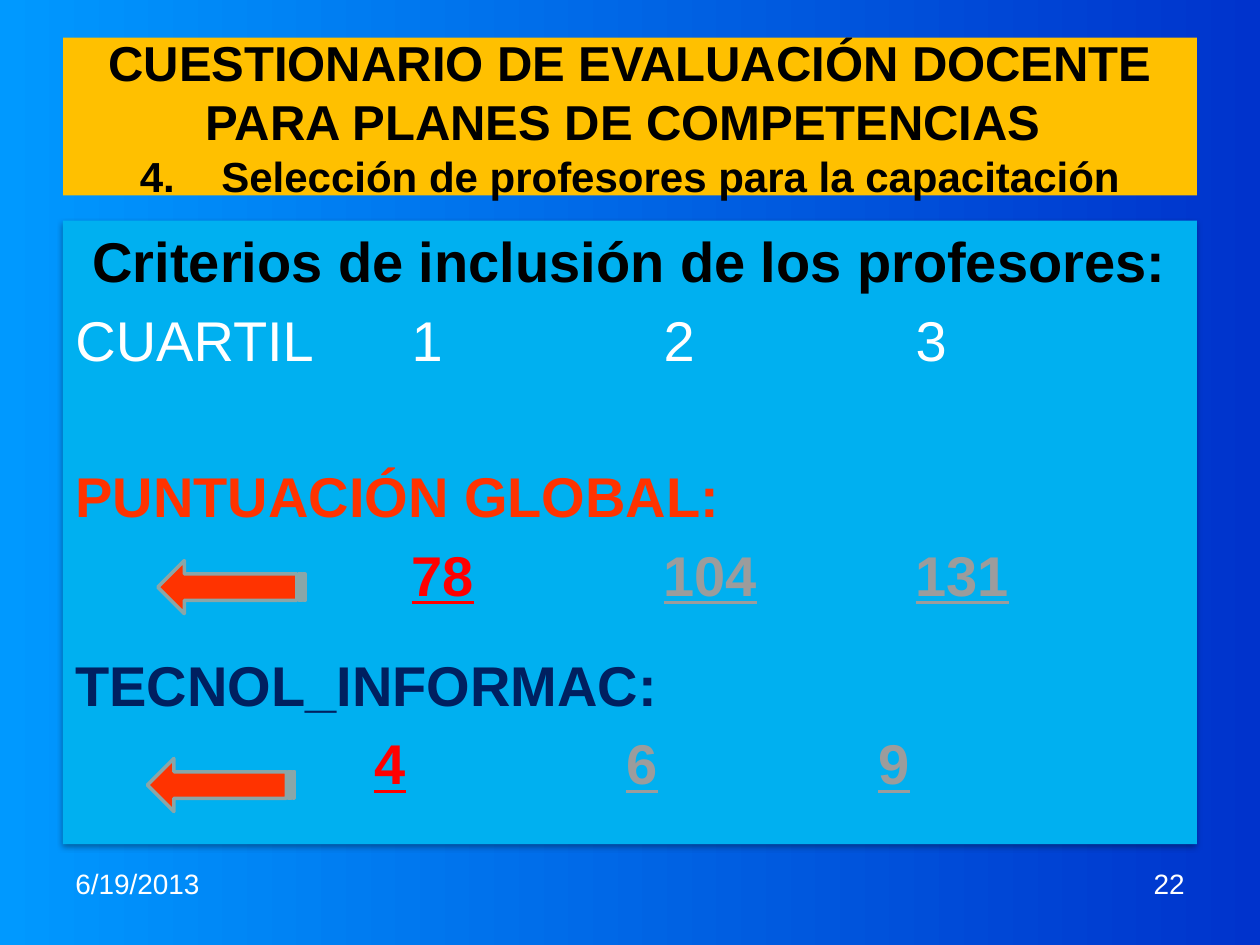
from lxml import etree
from pptx import Presentation
from pptx import util as u
from pptx.dml import color
from pptx.enum import shapes, text
from pptx.oxml import ns

COLORS = {
    "bg_left": "0099FF", "bg_right": "0033CC", "title": "FFC000", "panel": "00B0F0",
    "black": "000000", "white": "FFFFFF", "orange": "FF3300", "red": "FF0000",
    "gray": "9C9C9C", "navy": "002060", "arrow_line": "8AA6A8",
}
LEFT, WIDTH = u.Cm(1.27), u.Cm(22.86)
TAB_STEP = u.Cm(2.54)


def rgb(name):
    return color.RGBColor.from_string(COLORS[name])


def add_run(paragraph, words, color_name, **formats):
    run = paragraph.add_run()
    run.text = words
    run.font.name = "Arial"
    run.font.color.rgb = rgb(color_name)
    for attribute, value in formats.items():
        setattr(run.font, attribute, value)


presentation = Presentation()
presentation.slide_width, presentation.slide_height = u.Cm(25.4), u.Cm(19.05)
slide = presentation.slides.add_slide(presentation.slide_layouts[5])

# Background gradient, left to right
background = slide.background.fill
background.gradient()
background.gradient_angle = 0
for stop, name in zip(background.gradient_stops, ("bg_left", "bg_right")):
    stop.color.rgb = rgb(name)

# Title
title = slide.shapes.title
title.left, title.top, title.width, title.height = LEFT, u.Cm(0.76), WIDTH, u.Cm(3.18)
title.fill.solid()
title.fill.fore_color.rgb = rgb("title")
title.text_frame.auto_size = text.MSO_AUTO_SIZE.NONE
title.text_frame.vertical_anchor = text.MSO_ANCHOR.MIDDLE
heading = title.text_frame.paragraphs[0]
heading.alignment = text.PP_ALIGN.CENTER
title_lines = [
    ("CUESTIONARIO DE EVALUACIÓN DOCENTE", 28),
    ("PARA PLANES DE COMPETENCIAS ", 28),
    ("4.    Selección de profesores para la capacitación", 24),
]
for index, (words, size) in enumerate(title_lines):
    if index:
        heading.add_line_break()
    add_run(heading, words, "black", size=u.Pt(size), bold=True)

# Date and slide number
footers = [
    (LEFT, "6/19/2013", text.PP_ALIGN.LEFT),
    (u.Cm(18.21), "22", text.PP_ALIGN.RIGHT),
]
for left, words, alignment in footers:
    footer = slide.shapes.add_textbox(left, u.Cm(17.35), u.Cm(5.92), u.Cm(1.32))
    footer.text_frame.word_wrap = True
    paragraph = footer.text_frame.paragraphs[0]
    paragraph.alignment = alignment
    add_run(paragraph, words, "white", size=u.Pt(16))

# Criteria panel with a soft shadow
panel = slide.shapes.add_shape(shapes.MSO_SHAPE.RECTANGLE, LEFT, u.Cm(4.45), WIDTH, u.Cm(12.57))
panel.shadow.inherit = False
panel.fill.solid()
panel.fill.fore_color.rgb = rgb("panel")
panel.line.fill.background()
effects = panel._element.spPr.find(ns.qn("a:effectLst"))
shadow = etree.SubElement(effects, ns.qn("a:outerShdw"), blurRad="40000", dist="23000",
                          dir="5400000", rotWithShape="0")
shade = etree.SubElement(shadow, ns.qn("a:srgbClr"), val=COLORS["black"])
etree.SubElement(shade, ns.qn("a:alpha"), val="35000")

# Criteria: space before (pt), indent (cm), runs of (words, color, bold, underline)
criteria = [
    (7.5, 1.7, [("Criterios de inclusión de los profesores:", "black", True, False)]),
    (6.4, 1.7, [("CUARTIL\t1\t\t2\t\t3", "white", False, False)]),
    (51, 1.7, [("PUNTUACIÓN GLOBAL:", "orange", True, False)]),
    (6.4, 1.7, [("\t\t\t", "white", False, False), ("78", "red", True, True),
                ("\t\t104\t\t131", "gray", True, True)]),
    (24.6, 1.7, [("TECNOL_INFORMAC:", "navy", True, False)]),
    (6.4, 0.95, [("\t\t\t", "white", False, False), ("4", "red", True, True),
                 ("\t\t6\t\t9", "gray", True, True)]),
]
frame = panel.text_frame
frame.word_wrap = True
frame.vertical_anchor = text.MSO_ANCHOR.TOP
for index, (space, indent, runs) in enumerate(criteria):
    paragraph = frame.add_paragraph() if index else frame.paragraphs[0]
    paragraph.alignment = text.PP_ALIGN.LEFT if index else text.PP_ALIGN.CENTER
    paragraph.space_before = u.Pt(space)
    properties = paragraph._p.get_or_add_pPr()
    properties.set("marL", str(u.Cm(indent)))
    properties.set("indent", str(-u.Cm(indent)))
    properties.set("defTabSz", str(TAB_STEP))
    for words, name, bold, underline in runs:
        add_run(paragraph, words, name, size=u.Pt(32), bold=bold, underline=underline)

# Arrows pointing left from the first quartile
for left, top in ((3.18, 11.3), (2.97, 15.29)):
    arrow = slide.shapes.add_shape(shapes.MSO_SHAPE.STRIPED_RIGHT_ARROW,
                                   u.Cm(left), u.Cm(top), u.Cm(2.97), u.Cm(1.07))
    arrow.rotation = 180
    arrow.shadow.inherit = False
    arrow.fill.solid()
    arrow.fill.fore_color.rgb = rgb("orange")
    arrow.line.color.rgb = rgb("arrow_line")
    arrow.line.width = u.Pt(2)

presentation.save("out.pptx")
